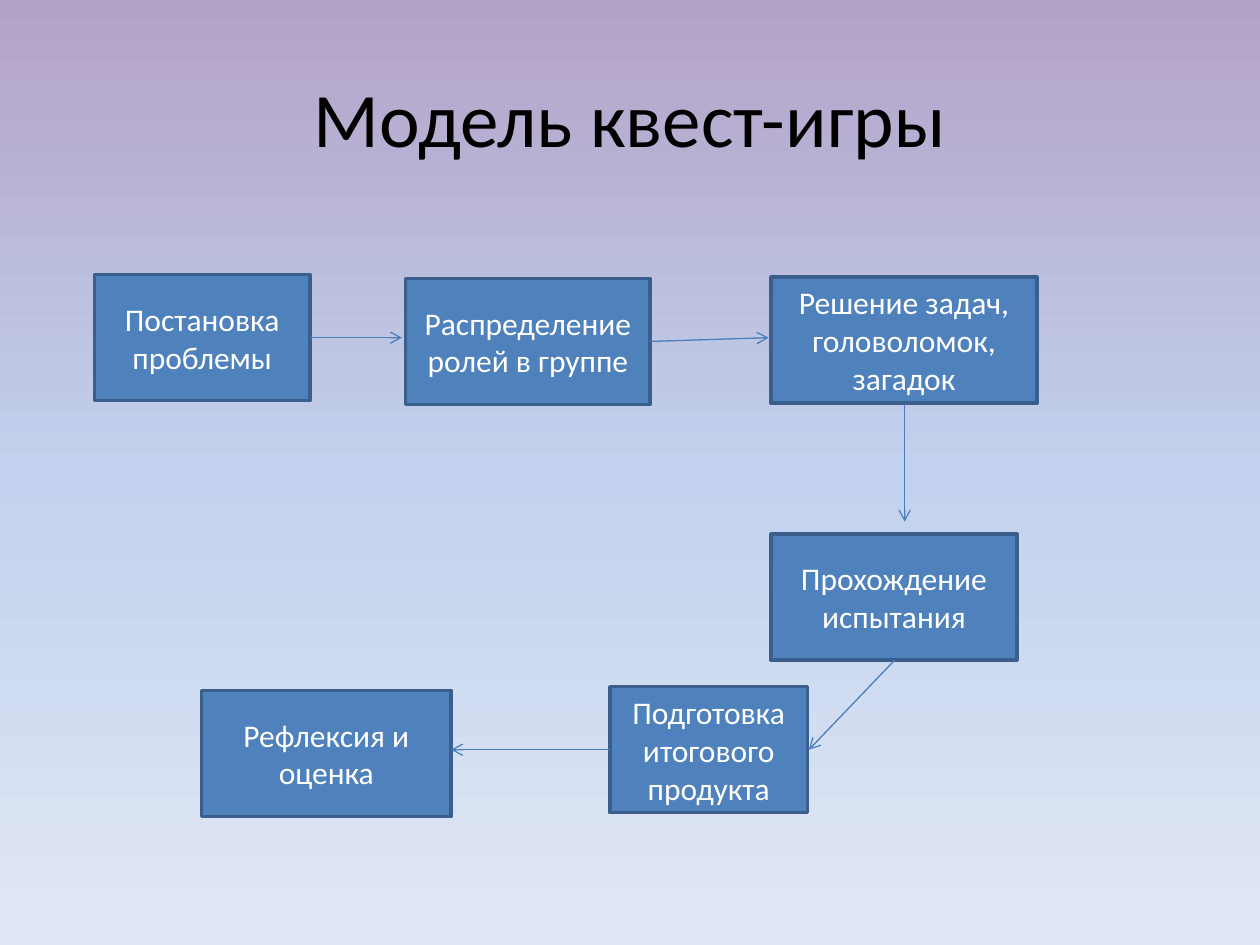
"""Build the quest-game model slide: six stages joined by arrows."""

from copy import deepcopy
from dataclasses import dataclass

from pptx import Presentation
from pptx.dml.color import RGBColor
from pptx.enum.shapes import MSO_CONNECTOR, MSO_SHAPE
from pptx.enum.text import MSO_ANCHOR, PP_ALIGN
from pptx.oxml.ns import qn
from pptx.oxml.xmlchemy import OxmlElement
from pptx.slide import Slide
from pptx.text.text import TextFrame
from pptx.util import Inches, Pt


@dataclass(frozen=True)
class Theme:
    font: str = "Calibri"
    title_size: int = 44
    stage_size: int = 18
    title_color: str = "000000"
    stage_text: str = "FFFFFF"
    stage_fill: str = "4F81BD"
    stage_border: str = "3A5F8C"
    arrow: str = "4B7EBC"
    background: tuple[tuple[float, str], ...] = (
        (0, "B3A2C7"),
        (0.5, "C2D1ED"),
        (1, "E1E8F5"),
    )


@dataclass(frozen=True)
class Stage:
    text: str
    left: float
    top: float
    width: float
    height: float = 1


@dataclass(frozen=True)
class Arrow:
    start: tuple[float, float]
    end: tuple[float, float]


THEME = Theme()

STAGES = (
    Stage("Постановка проблемы", 0.75, 2.18, 1.71),
    Stage("Распределение ролей в группе", 3.22, 2.21, 1.94),
    Stage("Решение задач, головоломок, загадок", 6.12, 2.2, 2.11),
    Stage("Прохождение испытания", 6.12, 4.24, 1.95),
    Stage("Подготовка итогового продукта", 4.84, 5.45, 1.57),
    Stage("Рефлексия и оценка", 1.6, 5.48, 1.98),
)

ARROWS = (
    Arrow((2.46, 2.68), (3.19, 2.68)),
    Arrow((5.16, 2.71), (6.1, 2.68)),
    Arrow((7.18, 3.21), (7.18, 4.14)),
    Arrow((7.1, 5.24), (6.42, 5.95)),
    Arrow((4.84, 5.95), (3.58, 5.95)),
)


def write_text(frame: TextFrame, text: str, *, size: int, color: str) -> None:
    """Write centred text with the given size and colour."""
    frame.word_wrap = True
    frame.vertical_anchor = MSO_ANCHOR.MIDDLE
    paragraph = frame.paragraphs[0]
    paragraph.alignment = PP_ALIGN.CENTER
    run = paragraph.add_run()
    run.text = text
    run.font.name = THEME.font
    run.font.size = Pt(size)
    run.font.color.rgb = RGBColor.from_string(color)


def paint_background(slide: Slide) -> None:
    """Fill the background with a top-to-bottom gradient of three colours."""
    fill = slide.background.fill
    fill.gradient()
    fill.gradient_angle = 270
    stop_list = next(slide.background._cSld.iter(qn("a:gsLst")))
    stop_list.append(deepcopy(stop_list[0]))
    for stop, (position, color) in zip(fill.gradient_stops, THEME.background):
        stop.position = position
        stop.color.rgb = RGBColor.from_string(color)


def add_title(slide: Slide, text: str) -> None:
    """Place and format the title placeholder."""
    title = slide.shapes.title
    title.left, title.top = Inches(0.5), Inches(0.3)
    title.width, title.height = Inches(9), Inches(1.25)
    write_text(title.text_frame, text, size=THEME.title_size, color=THEME.title_color)


def add_stage(slide: Slide, stage: Stage) -> None:
    """Draw one stage as a bordered rectangle."""
    shape = slide.shapes.add_shape(
        MSO_SHAPE.RECTANGLE,
        Inches(stage.left),
        Inches(stage.top),
        Inches(stage.width),
        Inches(stage.height),
    )
    shape.shadow.inherit = False
    shape.fill.solid()
    shape.fill.fore_color.rgb = RGBColor.from_string(THEME.stage_fill)
    shape.line.color.rgb = RGBColor.from_string(THEME.stage_border)
    shape.line.width = Pt(2)
    write_text(shape.text_frame, stage.text, size=THEME.stage_size, color=THEME.stage_text)


def add_arrow(slide: Slide, arrow: Arrow) -> None:
    """Draw a thin straight arrow with an open head."""
    connector = slide.shapes.add_connector(
        MSO_CONNECTOR.STRAIGHT,
        *(Inches(value) for value in arrow.start + arrow.end),
    )
    connector.line.color.rgb = RGBColor.from_string(THEME.arrow)
    connector.line.width = Pt(0.75)
    head = OxmlElement("a:tailEnd")
    head.set("type", "arrow")
    connector.line._get_or_add_ln().append(head)
    connector._element.spPr.append(OxmlElement("a:effectLst"))


def main() -> None:
    """Build and save the presentation."""
    presentation = Presentation()
    presentation.slide_width, presentation.slide_height = Inches(10), Inches(7.5)
    slide = presentation.slides.add_slide(presentation.slide_layouts[5])
    paint_background(slide)
    add_title(slide, "Модель квест-игры")
    for stage in STAGES:
        add_stage(slide, stage)
    for arrow in ARROWS:
        add_arrow(slide, arrow)
    presentation.save("out.pptx")


if __name__ == "__main__":
    main()
